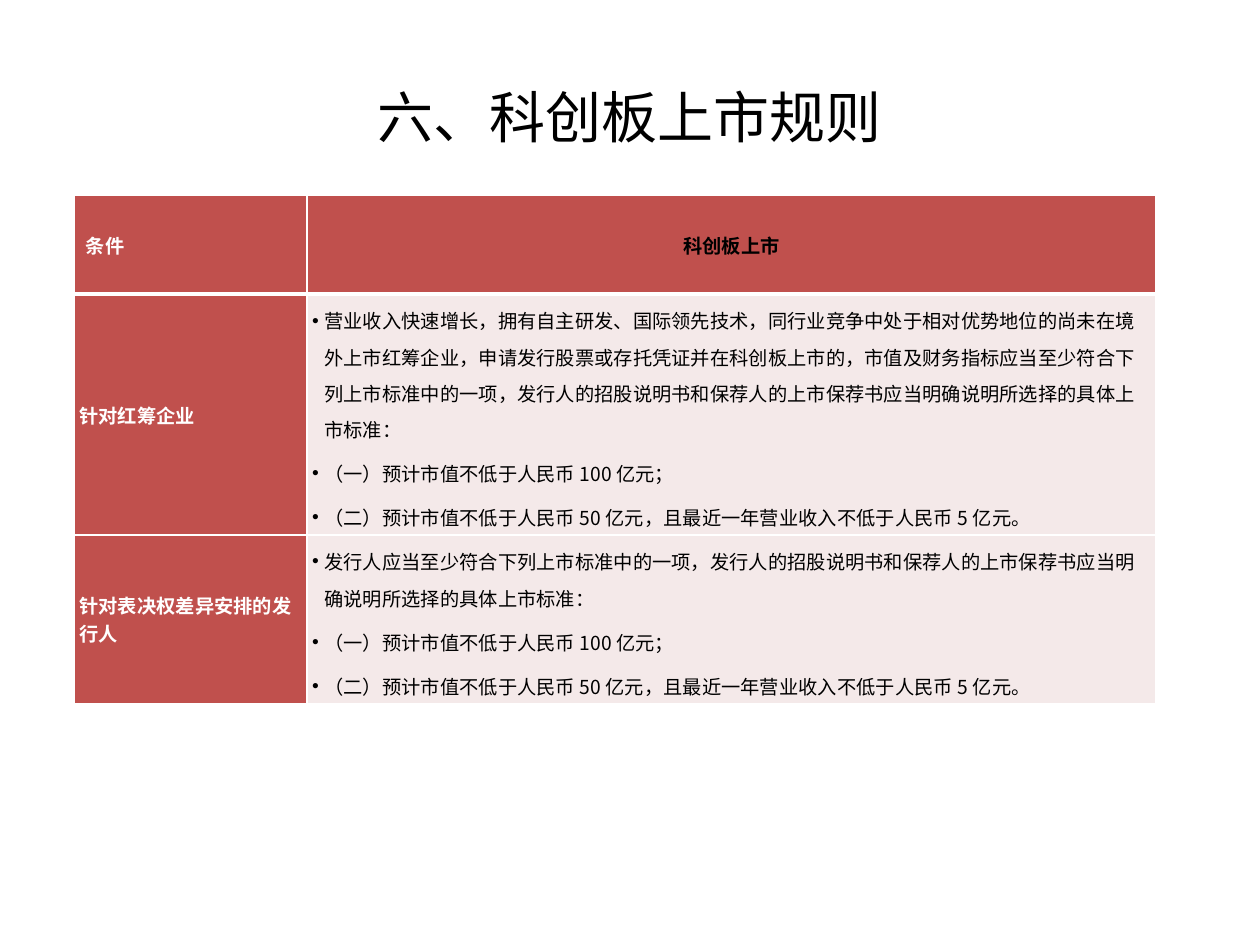
import pptx
import pptx.dml.color
import pptx.enum.text
import pptx.oxml
import pptx.oxml.ns
import pptx.util
from pptx.util import Cm, Pt

FONT = "Noto Sans CJK SC"
COLORS = {"red": "C0504D", "pink": "F4E9E9", "white": "FFFFFF", "black": "000000"}
ALIGN = pptx.enum.text.PP_ALIGN
MIDDLE = pptx.enum.text.MSO_ANCHOR.MIDDLE
TOP = pptx.enum.text.MSO_ANCHOR.TOP

STANDARDS = [
    "（一）预计市值不低于人民币 100 亿元；",
    "（二）预计市值不低于人民币 50 亿元，且最近一年营业收入不低于人民币 5 亿元。",
]
RULES = [
    ("针对红筹企业",
     "营业收入快速增长，拥有自主研发、国际领先技术，同行业竞争中处于相对优势地位的尚未在境外上市红筹企业，"
     "申请发行股票或存托凭证并在科创板上市的，市值及财务指标应当至少符合下列上市标准中的一项，"
     "发行人的招股说明书和保荐人的上市保荐书应当明确说明所选择的具体上市标准："),
    ("针对表决权差异安排的发行人",
     "发行人应当至少符合下列上市标准中的一项，发行人的招股说明书和保荐人的上市保荐书应当明确说明所选择的具体上市标准："),
]


def rgb(name):
    return pptx.dml.color.RGBColor.from_string(COLORS[name])


def xml(tag, attrs="", inner=""):
    return pptx.oxml.parse_xml(
        f'<a:{tag} {pptx.oxml.ns.nsdecls("a")} {attrs}>{inner}</a:{tag}>')


def style_paragraph(p, size, color, bold=False, align=ALIGN.LEFT):
    p.alignment = align
    f = p.font
    f.size, f.bold, f.name = Pt(size), bold, FONT
    f.color.rgb = rgb(color)
    p._p.pPr.find(pptx.oxml.ns.qn("a:latin")) 
    latin = p._p.pPr.defRPr.find(pptx.oxml.ns.qn("a:latin"))
    latin.addnext(xml("ea", f'typeface="{FONT}"'))


def add_bullet(p):
    """Give a styled paragraph a hanging bullet."""
    p.line_spacing = 1.3
    pPr = p._p.pPr
    pPr.set("marL", str(Cm(0.25)))
    pPr.set("indent", str(-Cm(0.25)))
    pPr.defRPr.addprevious(xml("buFont", 'typeface="Arial"'))
    pPr.defRPr.addprevious(xml("buChar", 'char="•"'))


def set_borders(cell, top=1, bottom=1):
    tcPr = cell._tc.get_or_add_tcPr()
    sides = {"lnL": 1, "lnR": 1, "lnT": top, "lnB": bottom}
    for i, (side, width) in enumerate(sides.items()):
        fill = f'<a:solidFill><a:srgbClr val="{COLORS["white"]}"/></a:solidFill>'
        tcPr.insert(i, xml(side, f'w="{Pt(width)}"', fill))


def fill_cell(cell, texts, fill, color, margins, bold=True, align=ALIGN.LEFT,
              anchor=MIDDLE, bullets=False):
    cell.fill.solid()
    cell.fill.fore_color.rgb = rgb(fill)
    cell.vertical_anchor = anchor
    side, edge = (Cm(m) for m in margins)
    cell.margin_left = cell.margin_right = side
    cell.margin_top = cell.margin_bottom = edge
    cell.text_frame.text = "\n".join(texts)
    for p in cell.text_frame.paragraphs:
        style_paragraph(p, 11, color, bold, align)
        p.space_before = Pt(4.4)
        if bullets:
            add_bullet(p)


def add_title(s, text):
    tf = s.shapes.add_textbox(Cm(1.27), Cm(0.76), Cm(22.86), Cm(3.18)).text_frame
    tf.word_wrap = True
    tf.vertical_anchor = MIDDLE
    tf.text = text
    style_paragraph(tf.paragraphs[0], 32, "black", align=ALIGN.CENTER)


def add_rules_table(s):
    frame = s.shapes.add_table(len(RULES) + 1, 2, Cm(1.5), Cm(3.93), Cm(21.8), Cm(6))
    table = frame.table
    table.first_row = table.horz_banding = False
    for column, width in zip(table.columns, (4.69, 17.11)):
        column.width = Cm(width)

    header, body = (0.23, 0.1), (0.1, 0.08)
    fill_cell(table.cell(0, 0), ["条件"], "red", "white", header)
    fill_cell(table.cell(0, 1), ["科创板上市"], "red", "black", header, align=ALIGN.CENTER)
    for row, (label, intro) in enumerate(RULES, start=1):
        fill_cell(table.cell(row, 0), [label], "red", "white", body)
        fill_cell(table.cell(row, 1), [intro, *STANDARDS], "pink", "black", body,
                  bold=False, anchor=TOP, bullets=True)
    for row in range(len(table.rows)):
        for cell in table.rows[row].cells:
            set_borders(cell, top=3 if row == 1 else 1, bottom=3 if row == 0 else 1)
    frame.height = Cm(9.14)


def main():
    prs = pptx.Presentation()
    prs.slide_width, prs.slide_height = Cm(25.4), Cm(19.05)
    s = prs.slides.add_slide(prs.slide_layouts[6])
    add_rules_table(s)
    add_title(s, "六、科创板上市规则")
    prs.save("out.pptx")


if __name__ == "__main__":
    main()
